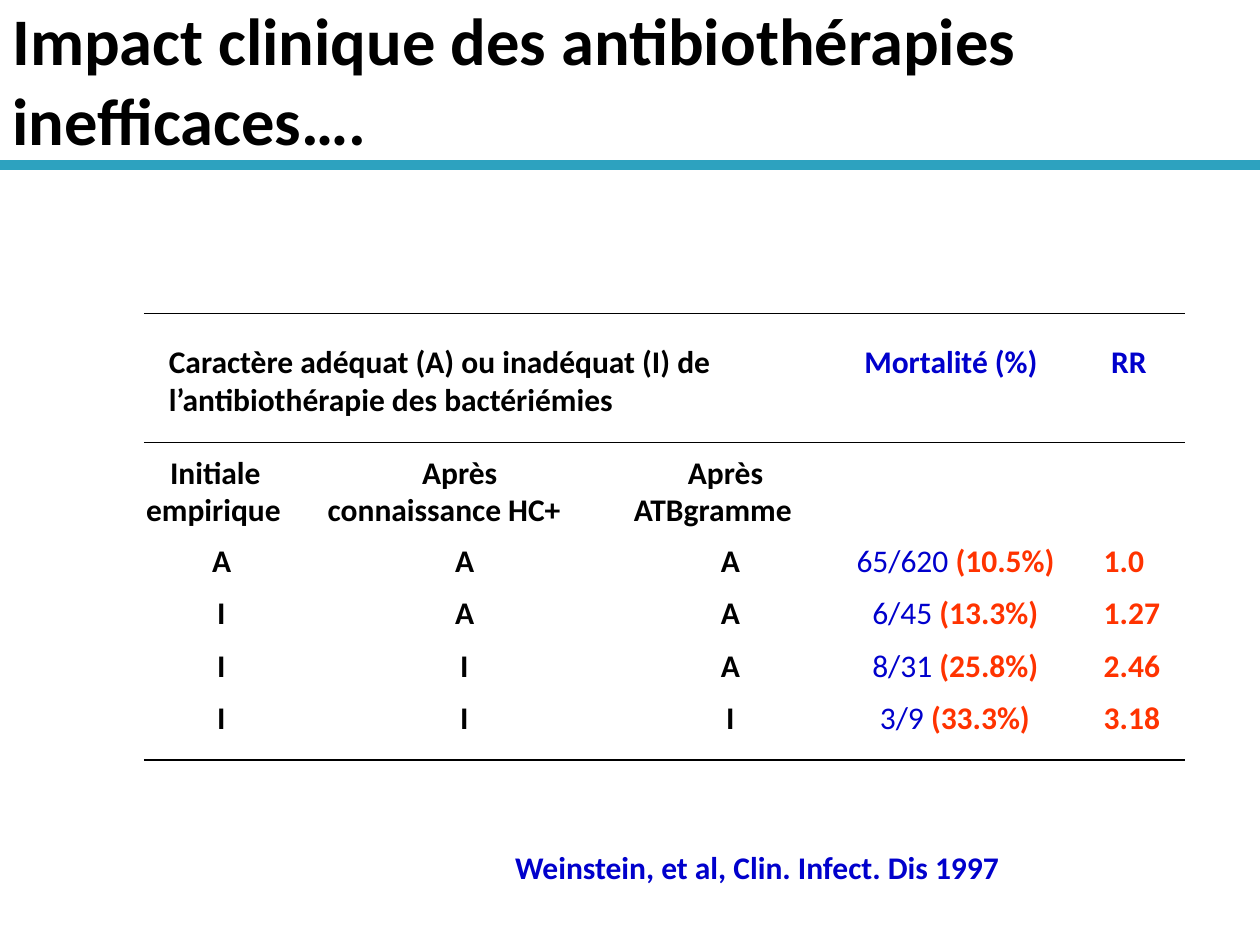
from dataclasses import dataclass
from lxml.etree import SubElement
from pptx import Presentation
from pptx.dml.color import RGBColor as Rgb
from pptx.enum.shapes import MSO_CONNECTOR as Conn
from pptx.enum.text import MSO_ANCHOR as Anchor, MSO_AUTO_SIZE as Auto
from pptx.oxml.ns import qn
from pptx.slide import Slide
from pptx.util import Pt

HUES = {"ink": "000000", "blue": "0000CC", "red": "FF3300", "teal": "2DA2BF"}
SLACK = 1.5


@dataclass(frozen=True)
class Run:
    text: str
    hue: str = "ink"
    bold: bool = True


@dataclass(frozen=True)
class Label:
    runs: tuple[Run, ...]
    left: float
    top: float
    width: float
    height: float = 21.6
    size: float = 18
    wrap: bool = False
    inset: tuple[float, float] = (0, 0)
    anchor: Anchor = Anchor.TOP


@dataclass(frozen=True)
class Rule:
    left: float
    right: float
    top: float
    hue: str = "ink"
    weight: float = 0.75


@dataclass(frozen=True)
class Case:
    marks: str
    deaths: str
    rate: str
    span: float
    risk: str


def draw_label(slide: Slide, label: Label) -> None:
    """Draw one text box, run by run, with slack for a single line."""
    width = label.width if label.wrap else label.width + SLACK
    box = slide.shapes.add_textbox(
        Pt(label.left), Pt(label.top), Pt(width), Pt(label.height))
    frame = box.text_frame
    frame.word_wrap = label.wrap
    frame.auto_size = Auto.NONE if label.wrap else Auto.SHAPE_TO_FIT_TEXT
    frame.vertical_anchor = label.anchor
    side, edge = label.inset
    frame.margin_left = frame.margin_right = Pt(side)
    frame.margin_top = frame.margin_bottom = Pt(edge)
    for part in label.runs:
        run = frame.paragraphs[0].add_run()
        run.text = part.text
        font = run.font
        font.name, font.size, font.bold = "Calibri", Pt(label.size), part.bold
        font.color.rgb = Rgb.from_string(HUES[part.hue])


def draw_rule(slide: Slide, rule: Rule) -> None:
    """Draw one horizontal line without a shadow."""
    line = slide.shapes.add_connector(
        Conn.STRAIGHT, Pt(rule.left), Pt(rule.top), Pt(rule.right), Pt(rule.top))
    line.line.color.rgb = Rgb.from_string(HUES[rule.hue])
    line.line.width = Pt(rule.weight)
    SubElement(line._element.spPr, qn("a:effectLst"))


def mid_label(runs: tuple[Run, ...], mid: float, top: float, width: float) -> Label:
    """Place a label around the middle of its column."""
    return Label(runs, mid - width / 2, top, width)


RULES = [
    Rule(0, 720, 94.3, "teal", 6),
    *(Rule(82.2, 677.3, top) for top in (179.3, 252.7, 434.3)),
]

TEXTS = [
    Label((Run("Impact clinique des antibiothérapies inefficaces…."),),
          0, 0, 720, 90, 38, True, (7.2, 3.6), Anchor.MIDDLE),
    Label((Run("Weinstein, et al, Clin. Infect. Dis 1997", "blue"),),
          287.3, 481, 293.8, 28.8, inset=(7.2, 3.6)),
    Label((Run("Caractère adéquat (A) ou inadéquat (I) de "
               "l’antibiothérapie des bactériémies"),),
          96.5, 195.3, 371.5, 43.2, wrap=True),
    Label((Run("Mortalité (%)", "blue"),), 493.9, 195.3, 100.1),
    Label((Run("RR", "blue"),), 635, 195.3, 21),
]

HEADS = [
    ("Initiale", 123.1, 259, 51.8),
    ("empirique", 123.1, 280.3, 79.2),
    ("Après", 262.8, 259, 43.2),
    ("connaissance HC+", 254.2, 280.3, 133.9),
    ("Après", 414.7, 259, 43.2),
    ("ATBgramme", 407.5, 280.3, 90.7),
]

CASES = [
    Case("AAA", "65/620 ", "(10.5%)", 115.9, "1.0"),
    Case("IAA", "6/45 ", "(13.3%)", 97.9, "1.27"),
    Case("IIA", "8/31 ", "(25.8%)", 97.9, "2.46"),
    Case("III", "3/9 ", "(33.3%)", 89.3, "3.18"),
]
MIDS = (126.6, 265.5, 417.4)
WIDTHS = {"A": 10.8, "I": 5}
FIRST, STEP = 308.9, 30


def draw_case(slide: Slide, case: Case, top: float) -> None:
    """Draw one row of marks, mortality and relative risk."""
    for mark, mid in zip(case.marks, MIDS):
        draw_label(slide, mid_label((Run(mark),), mid, top, WIDTHS[mark]))
    deaths = (Run(case.deaths, "blue", False), Run(case.rate, "red"))
    draw_label(slide, mid_label(deaths, 547.4, top, case.span))
    width = 24 if len(case.risk) == 3 else 33
    draw_label(slide, Label((Run(case.risk, "red"),), 630.7, top, width))


def main() -> None:
    """Build the slide and save it."""
    deck = Presentation()
    deck.slide_width, deck.slide_height = Pt(720), Pt(540)
    slide = deck.slides.add_slide(deck.slide_layouts[6])
    for rule in RULES:
        draw_rule(slide, rule)
    for label in TEXTS:
        draw_label(slide, label)
    for text, mid, top, width in HEADS:
        draw_label(slide, mid_label((Run(text),), mid, top, width))
    for row, case in enumerate(CASES):
        draw_case(slide, case, FIRST + row * STEP)
    deck.save("out.pptx")


if __name__ == "__main__":
    main()
